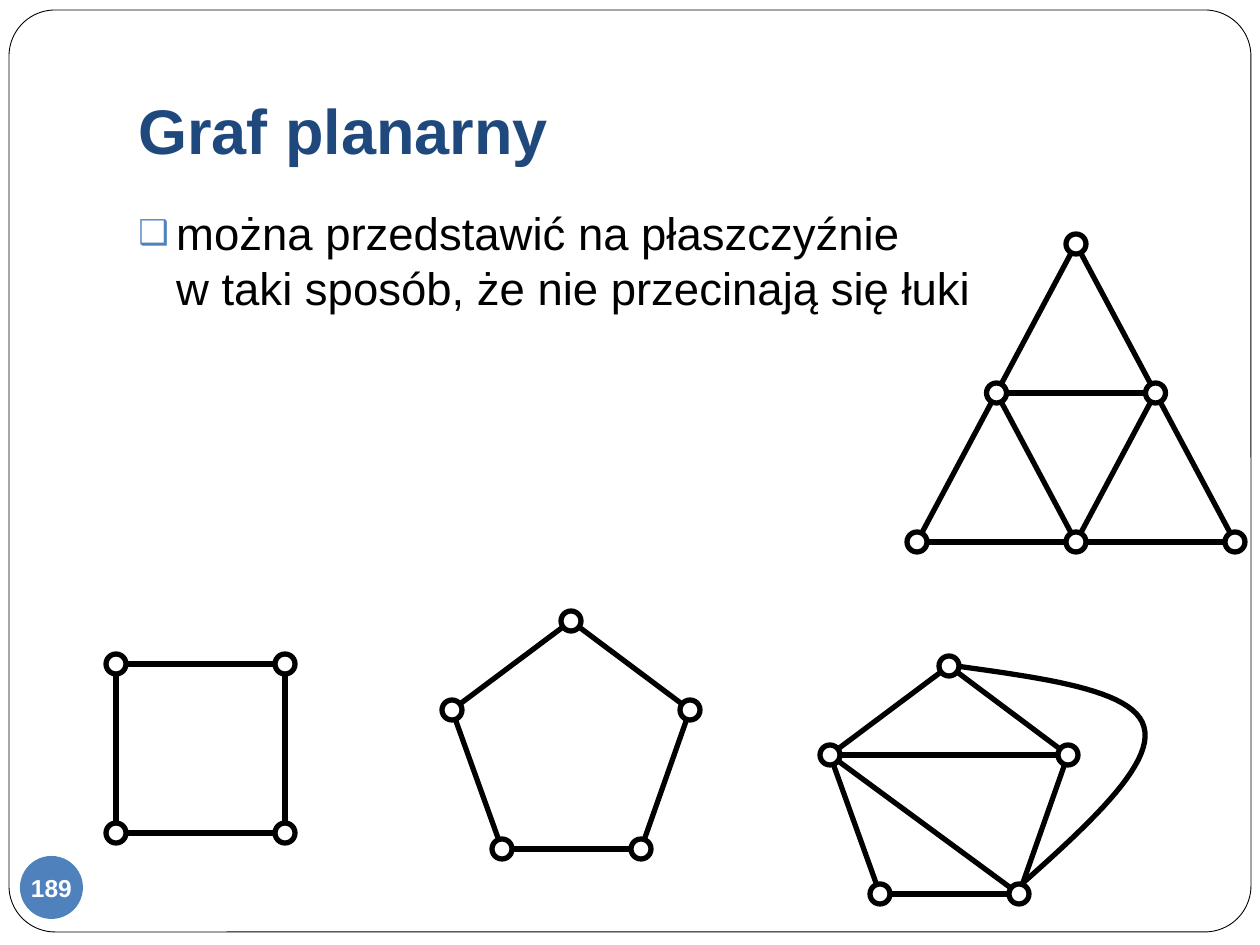
import dataclasses
import itertools

import lxml.etree
import pptx
import pptx.dml.color
import pptx.enum.shapes
import pptx.enum.text
import pptx.oxml.ns
import pptx.util

PX = pptx.util.Inches(1) / 126


@dataclasses.dataclass(frozen=True)
class Theme:
    font: str = "Arial"
    title: str = "1F497D"
    accent: str = "4F81BD"
    ink: str = "000000"
    paper: str = "FFFFFF"
    title_size: int = 36
    body_size: int = 26
    number_size: int = 14
    edge_width: float = 3
    frame_width: float = 0.5


THEME = Theme()

# Content
TITLE = "Graf planarny"
BODY = "można przedstawić na płaszczyźnie\vw taki sposób, że nie przecinają się łuki"
PAGE_NUMBER = "189"

# Graphs: vertices in px, edges as pairs of vertex indexes
NODE_SIZE = 20
PENTAGON = [(571, 621), (690, 710), (641, 849), (502, 849), (452, 710)]
TRIANGLE_TOP, TRIANGLE_SIDE, TRIANGLE_ROW = (1076, 244), 159, 149


def ring(count):
    return [(i, (i + 1) % count) for i in range(count)]


GRAPHS = [
    {"nodes": [(116, 664), (285, 664), (285, 833), (116, 833)], "edges": ring(4)},
    {"nodes": PENTAGON, "edges": ring(5)},
    {"nodes": [(x + 378, y + 45) for x, y in PENTAGON],
     "edges": ring(5) + [(4, 1), (4, 2)],
     "curves": [[(949, 665), (1041, 678), (1134, 689), (1144, 727)],
                [(1144, 727), (1155, 765), (1085, 828), (1014, 891)]]},
    {"nodes": [(TRIANGLE_TOP[0] + (k - row / 2) * TRIANGLE_SIDE,
                TRIANGLE_TOP[1] + row * TRIANGLE_ROW)
               for row in range(3) for k in range(row + 1)],
     "edges": [(0, 1), (0, 2), (1, 2), (1, 3), (1, 4), (3, 4),
               (2, 4), (2, 5), (4, 5)]},
]


def emu(*lengths):
    return [round(length * PX) for length in lengths]


def color(value):
    return pptx.dml.color.RGBColor.from_string(value)


def set_line(line, width):
    line.color.rgb = color(THEME.ink)
    line.width = pptx.util.Pt(width)


def add_shape(slide, kind, box, fill, line_width=None):
    shape = slide.shapes.add_shape(kind, *emu(*box))
    shape.shadow.inherit = False
    shape.fill.solid()
    shape.fill.fore_color.rgb = color(fill)
    if line_width:
        set_line(shape.line, line_width)
    else:
        shape.line.fill.background()
    return shape


def set_text(shape, text, size, text_color, bold=False):
    paragraph = shape.text_frame.paragraphs[0]
    paragraph.text = text
    paragraph.font.name = THEME.font
    paragraph.font.size = pptx.util.Pt(size)
    paragraph.font.bold = bold
    paragraph.font.color.rgb = color(text_color)
    return paragraph


def add_text_box(slide, box, *style):
    shape = slide.shapes.add_textbox(*emu(*box))
    shape.text_frame.word_wrap = True
    return shape, set_text(shape, *style)


def add_bullet(paragraph, indent):
    properties = paragraph._p.get_or_add_pPr()
    properties.set("marL", str(indent))
    properties.set("indent", str(-indent))
    qn = pptx.oxml.ns.qn
    bullet_color = lxml.etree.SubElement(properties, qn("a:buClr"))
    lxml.etree.SubElement(bullet_color, qn("a:srgbClr"), val=THEME.accent)
    lxml.etree.SubElement(properties, qn("a:buSzPct"), val="75000")
    lxml.etree.SubElement(properties, qn("a:buFont"), typeface=THEME.font)
    lxml.etree.SubElement(properties, qn("a:buChar"), char="❑")


def add_edge(slide, start, end):
    edge = slide.shapes.add_connector(
        pptx.enum.shapes.MSO_CONNECTOR.STRAIGHT, *emu(*start, *end))
    set_line(edge.line, THEME.edge_width)
    lxml.etree.SubElement(edge._element.spPr, pptx.oxml.ns.qn("a:effectLst"))


def bezier_points(controls, steps=24):
    for t in (step / steps for step in range(steps + 1)):
        weights = ((1 - t) ** 3, 3 * t * (1 - t) ** 2, 3 * t * t * (1 - t), t ** 3)
        yield tuple(sum(w * point[axis] for w, point in zip(weights, controls))
                    for axis in (0, 1))


def add_curve(slide, curves):
    points = [emu(*point) for point in
              itertools.chain.from_iterable(map(bezier_points, curves))]
    builder = slide.shapes.build_freeform(*points[0])
    builder.add_line_segments(points[1:], close=False)
    curve = builder.convert_to_shape()
    curve.shadow.inherit = False
    curve.fill.background()
    set_line(curve.line, THEME.edge_width)


def add_graph(slide, nodes, edges, curves=()):
    if curves:
        add_curve(slide, curves)
    for start, end in edges:
        add_edge(slide, nodes[start], nodes[end])
    for x, y in nodes:
        box = (x - NODE_SIZE / 2, y - NODE_SIZE / 2, NODE_SIZE, NODE_SIZE)
        add_shape(slide, pptx.enum.shapes.MSO_SHAPE.OVAL, box,
                  THEME.paper, THEME.edge_width)


def main():
    presentation = pptx.Presentation()
    presentation.slide_width, presentation.slide_height = emu(1260, 945)
    slide = presentation.slides.add_slide(presentation.slide_layouts[6])
    anchors = pptx.enum.text.MSO_ANCHOR

    # Frame
    frame = add_shape(slide, pptx.enum.shapes.MSO_SHAPE.ROUNDED_RECTANGLE,
                      (9, 10, 1242, 922), THEME.paper, THEME.frame_width)
    frame.adjustments[0] = 0.05

    # Title and body
    title, _ = add_text_box(slide, (126, 38, 1071, 142), TITLE,
                            THEME.title_size, THEME.title, True)
    title.text_frame.vertical_anchor = anchors.BOTTOM
    title.text_frame.margin_bottom = pptx.util.Inches(0.1)
    _, body = add_text_box(slide, (126, 199, 1071, 228), BODY,
                           THEME.body_size, THEME.ink)
    body.space_before = pptx.util.Pt(5.8)
    add_bullet(body, pptx.util.Inches(0.3))

    # Page number
    badge = add_shape(slide, pptx.enum.shapes.MSO_SHAPE.OVAL,
                      (20, 856, 63, 63), THEME.accent)
    number = set_text(badge, PAGE_NUMBER, THEME.number_size, THEME.paper, True)
    number.alignment = pptx.enum.text.PP_ALIGN.CENTER
    text = badge.text_frame
    text.word_wrap = False
    text.vertical_anchor = anchors.MIDDLE
    text.margin_left = text.margin_right = text.margin_top = text.margin_bottom = 0

    # Graphs
    for graph in GRAPHS:
        add_graph(slide, **graph)

    presentation.save("out.pptx")


if __name__ == "__main__":
    main()
